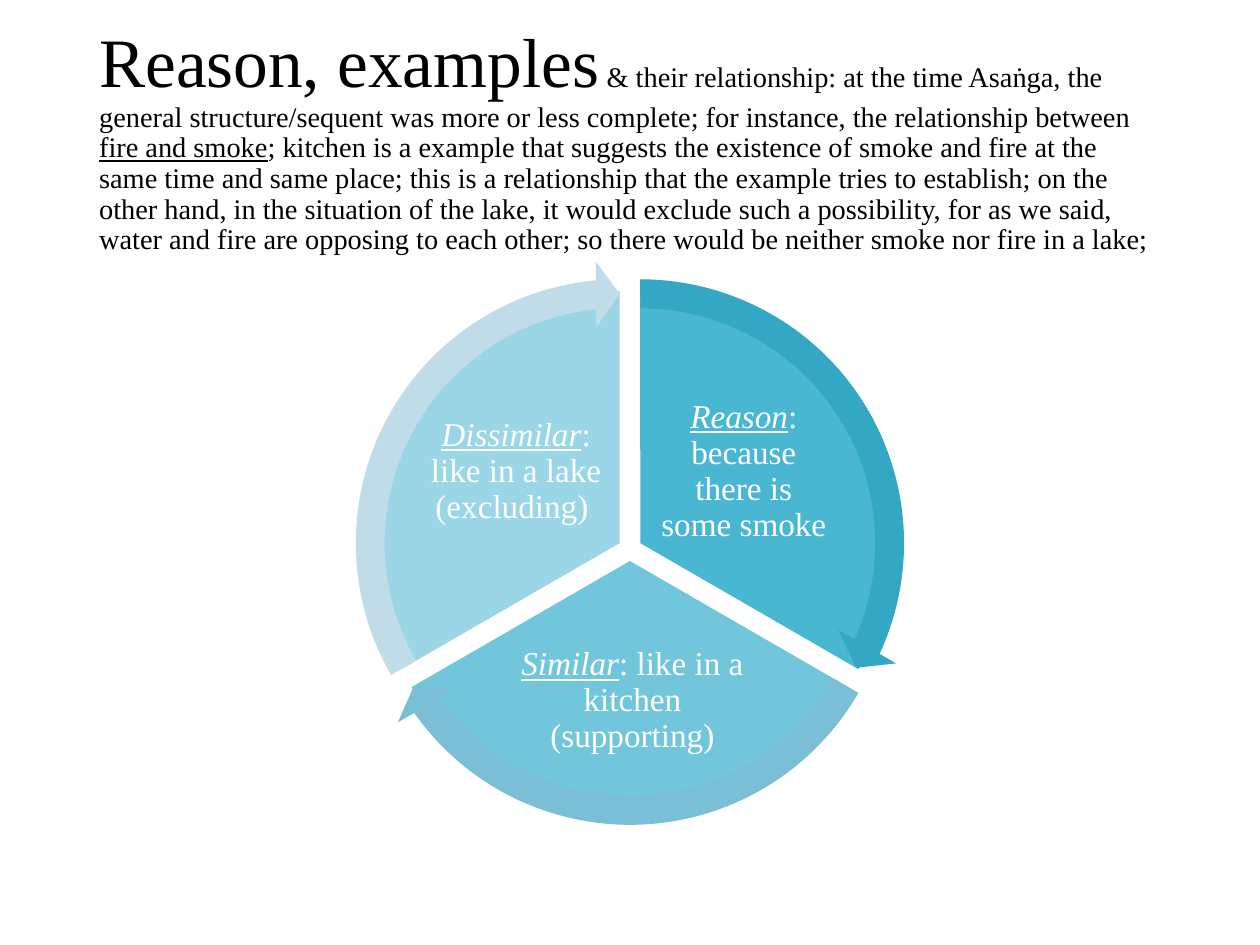
from math import cos, radians, sin

from lxml.etree import SubElement
from pptx import Presentation
from pptx.dml.color import RGBColor
from pptx.enum.shapes import MSO_SHAPE as Shape
from pptx.enum.text import MSO_ANCHOR as Anchor, PP_ALIGN as Align
from pptx.oxml.ns import qn
from pptx.util import Cm, Pt

BLACK = RGBColor(0x00, 0x00, 0x00)
WHITE = RGBColor(0xFF, 0xFF, 0xFF)
WEDGE_BLUE = RGBColor(0x36, 0xAF, 0xCE)
ARROW_BLUES = (
    RGBColor(0x34, 0xA7, 0xC5),
    RGBColor(0x7A, 0xBF, 0xD6),
    RGBColor(0xBF, 0xDC, 0xE8),
)

FONT = "Times New Roman"
CENTER_X, CENTER_Y, OFFSET = 12.7, 11.07, 0.24
WEDGE_SIZE, ARROW_SIZE = 10.16, 11.4
SWEEP = 120
ANGLE_UNIT = 0.6
HEAD_ANGLE = 3.275

TITLE = (
    ("Reason, examples", {"size": Pt(39.6)}),
    (" & their relationship: at the time Asaṅga, the general structure/sequent "
     "was more or less complete; for instance, the relationship between ", {}),
    ("fire and smoke", {"underline": True}),
    ("; kitchen is a example that suggests the existence of smoke and fire at the "
     "same time and same place; this is a relationship that the example tries to "
     "establish; on the other hand, in the situation of the lake, it would exclude "
     "such a possibility, for as we said, water and fire are opposing to each "
     "other; so there would be neither smoke nor fire in a lake;", {}),
)
TERM = {"italic": True, "underline": True}
SECTORS = (
    ("Reason", ": because there is some smoke", 90, (13.18, 8, 3.63, 3.02)),
    ("Similar", ": like in a kitchen (supporting)", 70, (10.03, 12.8, 5.44, 2.67)),
    ("Dissimilar", ": like in a lake (excluding) ", 50, (8.59, 8, 3.63, 3.02)),
)


def set_attributes(target, values):
    """Set each named value on the target."""
    for name, value in values.items():
        setattr(target, name, value)


def add_text(shapes, box, runs, font, align, inset=None):
    """Add a wrapped, vertically centred text box of formatted runs."""
    frame = shapes.add_textbox(*map(Cm, box)).text_frame
    set_attributes(frame, {"word_wrap": True, "vertical_anchor": Anchor.MIDDLE})
    if inset is not None:
        sides = ("left", "top", "right", "bottom")
        set_attributes(frame, {f"margin_{side}": Cm(inset) for side in sides})
    paragraph = frame.paragraphs[0]
    set_attributes(paragraph, {"alignment": align, "line_spacing": 0.9})
    for text, changes in runs:
        run = paragraph.add_run()
        run.text = text
        values = {"name": FONT, **font, **changes}
        color = values.pop("color")
        set_attributes(run.font, values)
        run.font.color.rgb = color


def add_round(shapes, kind, center, size, adjustments, color, opacity=100):
    """Add a plain filled round shape about a centre point."""
    left, top = (Cm(value - size / 2) for value in center)
    shape = shapes.add_shape(kind, left, top, Cm(size), Cm(size))
    for index, value in enumerate(adjustments):
        shape.adjustments[index] = value
    shape.shadow.inherit = False
    shape.line.fill.background()
    shape.fill.solid()
    shape.fill.fore_color.rgb = color
    if opacity < 100:
        fill_color = shape.fill._xPr.find(qn("a:solidFill"))[0]
        SubElement(fill_color, qn("a:alpha"), val=str(opacity * 1000))


def sector_geometry(index):
    """Return the centre and the start and end angle values of a sector."""
    start = (270 + index * SWEEP) % 360
    middle = radians(start + SWEEP / 2)
    center = (CENTER_X + OFFSET * cos(middle), CENTER_Y + OFFSET * sin(middle))
    return center, start * ANGLE_UNIT, (start + SWEEP) % 360 * ANGLE_UNIT


def add_cycle(shapes):
    """Add the three labelled wedges and the arrows that run around them."""
    for index, (term, detail, opacity, box) in enumerate(SECTORS):
        center, start, end = sector_geometry(index)
        add_round(shapes, Shape.PIE, center, WEDGE_SIZE, (start, end),
                  WEDGE_BLUE, opacity)
        add_text(shapes, box, ((term, TERM), (detail, {})),
                 {"size": Pt(19), "color": WHITE}, Align.CENTER, 0.08)
    for index, color in enumerate(ARROW_BLUES):
        center, start, end = sector_geometry(index)
        adjustments = (0.051, HEAD_ANGLE, end - HEAD_ANGLE, start, 0.059)
        add_round(shapes, Shape.CIRCULAR_ARROW, center, ARROW_SIZE,
                  adjustments, color)


def main():
    """Build and save the slide."""
    presentation = Presentation()
    set_attributes(presentation, {"slide_width": Cm(25.4), "slide_height": Cm(19.05)})
    slide = presentation.slides.add_slide(presentation.slide_layouts[6])
    add_text(slide.shapes, (1.75, 1.02, 21.89, 3.68), TITLE,
             {"size": Pt(16.2), "color": BLACK}, Align.LEFT)
    add_cycle(slide.shapes.add_group_shape().shapes)
    presentation.save("out.pptx")


if __name__ == "__main__":
    main()
